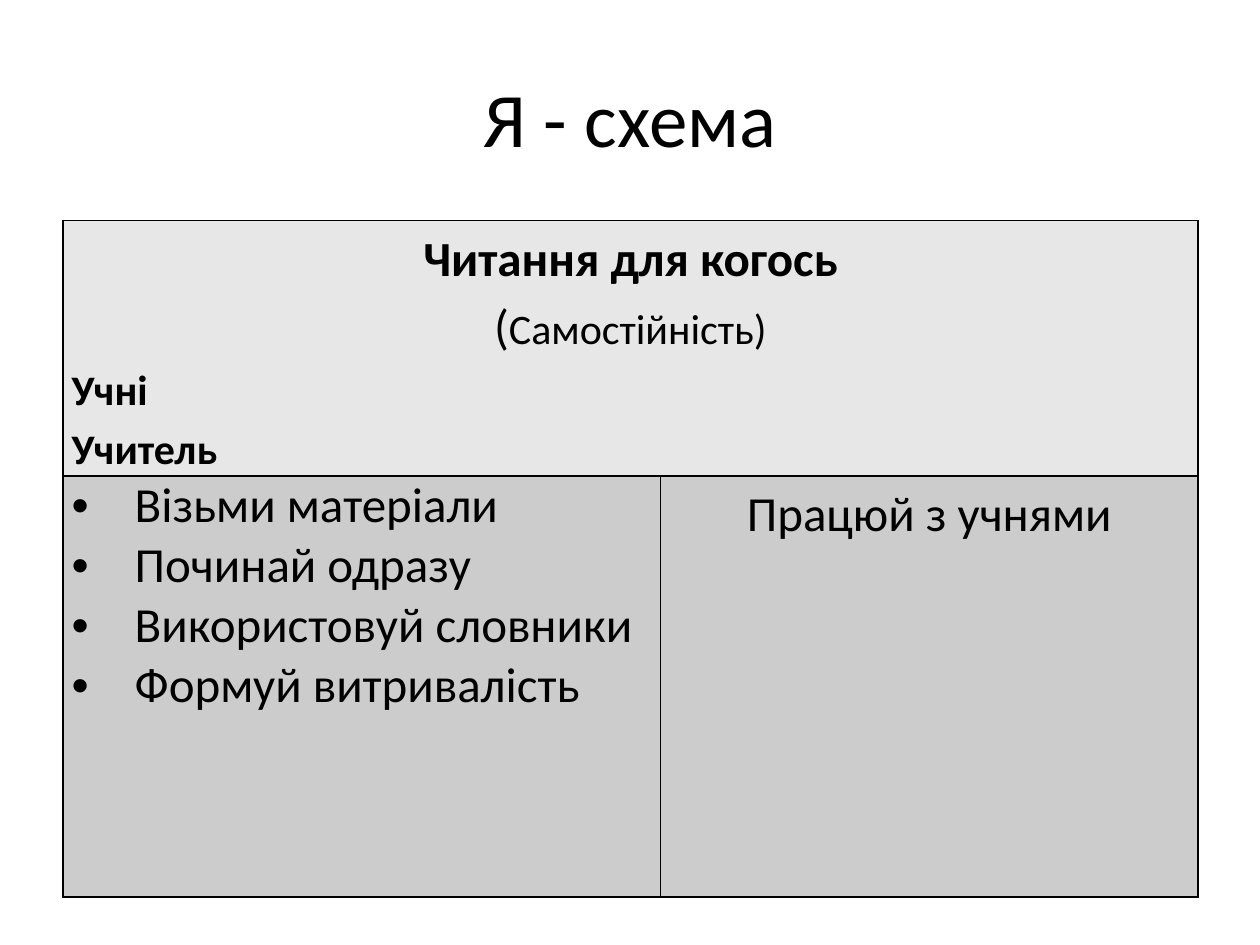
from lxml.etree import SubElement
from pptx import Presentation
from pptx.dml.color import RGBColor
from pptx.enum.text import MSO_ANCHOR, PP_ALIGN
from pptx.oxml.ns import qn
from pptx.util import Pt

BLACK = RGBColor(0x00, 0x00, 0x00)
HEADER_FILL = RGBColor(0xE7, 0xE7, 0xE7)
BODY_FILL = RGBColor(0xCC, 0xCC, 0xCC)


class SlideBuilder:
    font = "Calibri"
    border = Pt(1)
    spacing = 1.15

    def __init__(self, prs):
        self.s = prs.slides.add_slide(prs.slide_layouts[5])

    def run(self, p, text, size, bold=False):
        r = p.add_run()
        r.text = text
        r.font.name = self.font
        r.font.size = Pt(size)
        r.font.bold = bold
        r.font.color.rgb = BLACK

    def title(self, text, left, top, width, height):
        sp = self.s.shapes.title
        sp.left, sp.top, sp.width, sp.height = map(Pt, (left, top, width, height))
        tf = sp.text_frame
        tf.vertical_anchor = MSO_ANCHOR.MIDDLE
        p = tf.paragraphs[0]
        p.alignment = PP_ALIGN.CENTER
        self.run(p, text, 44)

    def table(self, left, top, widths, heights):
        frame = self.s.shapes.add_table(
            len(heights), len(widths), Pt(left), Pt(top), Pt(sum(widths)), Pt(sum(heights))
        )
        tbl = frame.table
        for col, width in zip(tbl.columns, widths):
            col.width = Pt(width)
        for row, height in zip(tbl.rows, heights):
            row.height = Pt(height)
        return tbl

    def cell(self, cell, fill):
        cell.margin_left = cell.margin_right = Pt(5)
        cell.margin_top = cell.margin_bottom = 0
        tcPr = cell._tc.get_or_add_tcPr()
        for side in ("a:lnL", "a:lnR", "a:lnT", "a:lnB"):
            ln = SubElement(tcPr, qn(side), w=str(self.border))
            solid = SubElement(ln, qn("a:solidFill"))
            SubElement(solid, qn("a:srgbClr"), val=str(BLACK))
        cell.fill.solid()
        cell.fill.fore_color.rgb = fill

    def paragraph(self, cell, runs, align=PP_ALIGN.LEFT, bullet=False):
        tf = cell.text_frame
        p = tf.paragraphs[0]
        if p.runs:
            p = tf.add_paragraph()
        p.alignment = align
        if bullet:
            pPr = p._p.get_or_add_pPr()
            pPr.set("marL", str(Pt(36)))
            pPr.set("indent", str(-Pt(36)))
            SubElement(pPr, qn("a:buFont"), typeface="Arial")
            SubElement(pPr, qn("a:buChar"), char="•")
        else:
            p.line_spacing = self.spacing
        for run in runs:
            self.run(p, *run)


def main():
    prs = Presentation()
    prs.slide_width, prs.slide_height = Pt(720), Pt(540)
    slide = SlideBuilder(prs)
    slide.title("Я - схема", 36, 21.6, 648, 90)

    tbl = slide.table(36, 126, (341.5, 307), (146, 240.5))
    for row, fill in enumerate((HEADER_FILL, BODY_FILL)):
        for col in range(2):
            slide.cell(tbl.cell(row, col), fill)

    header = tbl.cell(0, 0)
    header.merge(tbl.cell(0, 1))
    slide.paragraph(header, [("Читання для когось", 28, True)], PP_ALIGN.CENTER)
    slide.paragraph(header, [("(", 28), ("Самостійність)", 24)], PP_ALIGN.CENTER)
    for role in ("Учні", "Учитель"):
        slide.paragraph(header, [(role, 24, True)])

    for task in (
        "Візьми матеріали",
        "Починай одразу",
        "Використовуй словники",
        "Формуй витривалість",
    ):
        slide.paragraph(tbl.cell(1, 0), [(task, 28)], bullet=True)
    slide.paragraph(tbl.cell(1, 1), [("Працюй з учнями", 28)], PP_ALIGN.CENTER)

    prs.save("out.pptx")


if __name__ == "__main__":
    main()
